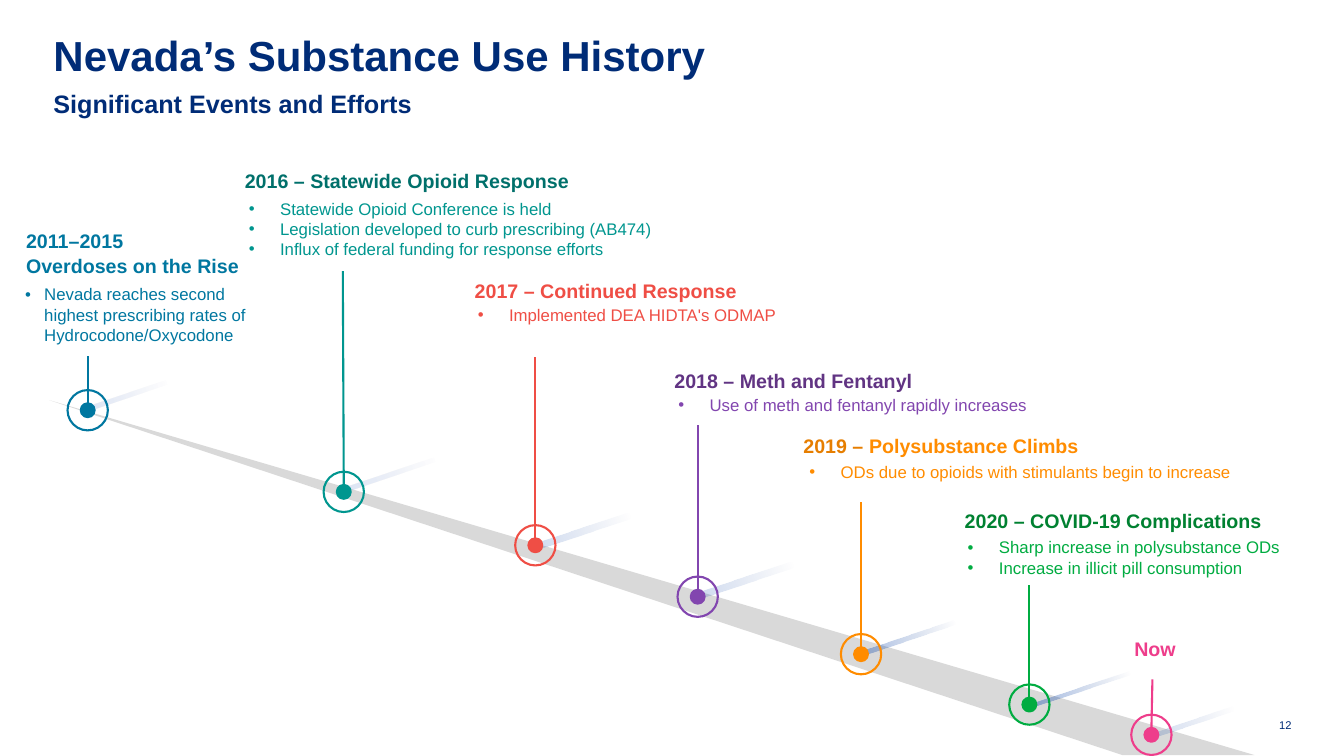
from collections import namedtuple

from lxml import etree
from pptx import Presentation
from pptx.dml.color import RGBColor
from pptx.enum import shapes, text
from pptx.oxml import ns
from pptx.util import Inches, Pt

NAVY = RGBColor(0x00, 0x2C, 0x77)
GREY = RGBColor(0xD9, 0xD9, 0xD9)
BEAM_START = RGBColor(0x00, 0x42, 0xB2)
BEAM_END = RGBColor(0x00, 0x33, 0x8B)
BLUE = RGBColor(0x00, 0x77, 0xA0)
TEAL = RGBColor(0x00, 0x96, 0x8F)
DARK_TEAL = RGBColor(0x00, 0x70, 0x6B)
RED = RGBColor(0xEF, 0x4E, 0x45)
PURPLE = RGBColor(0x82, 0x46, 0xAF)
DARK_PURPLE = RGBColor(0x61, 0x34, 0x83)
ORANGE = RGBColor(0xFF, 0x8C, 0x00)
DARK_ORANGE = RGBColor(0xE6, 0x7E, 0x00)
GREEN = RGBColor(0x00, 0xAC, 0x41)
DARK_GREEN = RGBColor(0x00, 0x81, 0x31)
PINK = RGBColor(0xEE, 0x3D, 0x8B)

SLIDE_W, SLIDE_H = 13.33, 7.5
RING, DOT = 0.4, 0.13
INSET = 0.1

# center: middle of the ring; stem: (bottom y, top x, top y)
# beam: left, top, width, height, opacity, end of fade (both in percent)
Marker = namedtuple("Marker", "color center stem beam")
MARKERS = [
    Marker(BLUE, (0.87, 4.07), (4.02, 0.87, 3.53), (0.84, 3.87, 1.02, 0.05, 14, 81)),
    Marker(TEAL, (3.41, 4.88), (4.89, 3.4, 2.69), (3.42, 4.66, 1.02, 0.05, 14, 89)),
    Marker(RED, (5.31, 5.41), (5.47, 5.31, 3.54), (5.27, 5.23, 1.02, 0.07, 20, 100)),
    Marker(PURPLE, (6.92, 5.92), (5.96, 6.92, 4.22), (6.88, 5.72, 1.02, 0.07, 20, 100)),
    Marker(ORANGE, (8.54, 6.49), (6.44, 8.54, 4.98), (8.48, 6.31, 1.02, 0.05, 37, 100)),
    Marker(GREEN, (10.21, 6.99), (6.96, 10.21, 5.8), (10.24, 6.81, 1, 0.04, 37, 100)),
    Marker(PINK, (11.42, 7.29), (7.24, 11.43, 6.74), (11.37, 7.14, 0.9, 0.05, 20, 100)),
]

# box: left, top, width; bullets_at: offset of the bullets from the box
Event = namedtuple("Event", "box heading bullets_at indent color bullets")
EVENTS = [
    Event((2.33, 1.62, 4.83), [[("2016 – Statewide Opioid Response", DARK_TEAL)]],
          (0.04, 0.3), 0.31, TEAL,
          ["Statewide Opioid Conference is held",
           "Legislation developed to curb prescribing (AB474)",
           "Influx of federal funding for response efforts"]),
    Event((0.16, 2.22, 2.69), [[("2011–2015", BLUE)], [("Overdoses on the Rise", BLUE)]],
          (-0.01, 0.55), 0.19, BLUE,
          ["Nevada reaches second highest prescribing rates of Hydrocodone/Oxycodone"]),
    Event((4.61, 2.71, 4.05), [[("2017 – Continued Response", RED)]],
          (0.03, 0.26), 0.31, RED, ["Implemented DEA HIDTA's ODMAP"]),
    Event((6.59, 3.61, 4.62), [[("2018 – Meth and Fentanyl", DARK_PURPLE)]],
          (0.04, 0.26), 0.31, PURPLE, ["Use of meth and fentanyl rapidly increases"]),
    Event((7.87, 4.25, 5.4), [[("2019 – ", DARK_ORANGE), ("Polysubstance Climbs", ORANGE)]],
          (0.06, 0.28), 0.31, ORANGE,
          ["ODs due to opioids with stimulants begin to increase"]),
    Event((9.47, 5, 3.8), [[("2020 – COVID-19 Complications", DARK_GREEN)]],
          (0.03, 0.28), 0.31, GREEN,
          ["Sharp increase in polysubstance ODs", "Increase in illicit pill consumption"]),
]


def add_run(p, words, size, color, bold=False):
    r = p.add_run()
    r.text = words
    r.font.name = "Arial"
    r.font.size = Pt(size)
    r.font.bold = bold
    r.font.color.rgb = color


def add_box(s, x, y, w, h, inset=0.0, anchor=text.MSO_ANCHOR.TOP):
    tf = s.shapes.add_textbox(Inches(x), Inches(y), Inches(w), Inches(h)).text_frame
    tf.word_wrap = True
    tf.vertical_anchor = anchor
    tf.margin_left = tf.margin_right = Inches(inset)
    tf.margin_top = tf.margin_bottom = Inches(inset / 2)
    return tf


def add_shape(s, kind, x, y, w, h):
    sp = s.shapes.add_shape(kind, Inches(x), Inches(y), Inches(w), Inches(h))
    sp.shadow.inherit = False
    return sp


def add_circle(s, center, size, color, width, filled):
    x, y = center
    sp = add_shape(s, shapes.MSO_SHAPE.OVAL, x - size / 2, y - size / 2, size, size)
    if filled:
        sp.fill.solid()
        sp.fill.fore_color.rgb = color
    else:
        sp.fill.background()
    sp.line.color.rgb = color
    sp.line.width = Pt(width)


def add_header(s, x, y, w):
    title = s.shapes.title
    title.left, title.top = Inches(x), Inches(y)
    title.width, title.height = Inches(w), Inches(0.54)
    tf = title.text_frame
    tf.margin_left = tf.margin_right = tf.margin_top = tf.margin_bottom = 0
    tf.vertical_anchor = text.MSO_ANCHOR.TOP
    p = tf.paragraphs[0]
    p.alignment = text.PP_ALIGN.LEFT
    p.line_spacing = 0.8
    add_run(p, "Nevada’s Substance Use History", 30, NAVY, True)
    tf = add_box(s, x, y + 0.49, w, 0.35)
    add_run(tf.paragraphs[0], "Significant Events and Efforts", 18, NAVY, True)


def add_road(s, x, y, w, h):
    road = s.shapes.build_freeform(Inches(x), Inches(y))
    road.add_line_segments([(Inches(x + w), Inches(y + h)),
                            (Inches(x + w - 1.31), Inches(y + h))], close=True)
    sp = road.convert_to_shape()
    sp.shadow.inherit = False
    sp.fill.solid()
    sp.fill.fore_color.rgb = GREY
    sp.line.fill.background()


def add_beam(s, x, y, w, h, opacity, fade_end):
    sp = add_shape(s, shapes.MSO_SHAPE.ROUNDED_RECTANGLE, x, y, w, h)
    sp.adjustments[0] = 0.5
    sp.rotation = 341.6
    sp.line.fill.background()
    sp.fill.gradient()
    sp.fill.gradient_angle = 0
    stops = zip(sp.fill.gradient_stops, (BEAM_START, BEAM_END), (0, fade_end))
    for stop, color, position in stops:
        stop.color.rgb = color
        stop.position = position / 100
    colors = sp._element.spPr.iter(ns.qn("a:srgbClr"))
    for color, percent in zip(list(colors), (opacity, 0)):
        etree.SubElement(color, ns.qn("a:alpha"), val=str(percent * 1000))


def add_marker(s, marker):
    add_beam(s, *marker.beam)
    add_circle(s, marker.center, RING, marker.color, 1.5, False)
    add_circle(s, marker.center, DOT, marker.color, 2, True)
    bottom, top_x, top = marker.stem
    stem = s.shapes.add_connector(shapes.MSO_CONNECTOR.STRAIGHT, Inches(marker.center[0]),
                                  Inches(bottom), Inches(top_x), Inches(top))
    stem.line.color.rgb = marker.color
    stem.line.width = Pt(1.5)
    etree.SubElement(stem._element.spPr, ns.qn("a:effectLst"))


def add_event(s, event):
    x, y, w = event.box
    # Heading lines
    for i, line in enumerate(event.heading):
        tf = add_box(s, x, y + i * 0.25, w, 0.34, INSET, text.MSO_ANCHOR.MIDDLE)
        for words, color in line:
            add_run(tf.paragraphs[0], words, 14, color, True)
    # Bullets
    dx, dy = event.bullets_at
    tf = add_box(s, x + dx, y + dy, w, 0.1 + 0.2 * len(event.bullets), INSET)
    for i, words in enumerate(event.bullets):
        p = tf.add_paragraph() if i else tf.paragraphs[0]
        pPr = p._p.get_or_add_pPr()
        pPr.set("marL", str(Inches(event.indent)))
        pPr.set("indent", str(-Inches(event.indent)))
        etree.SubElement(pPr, ns.qn("a:buFont"), typeface="Arial")
        etree.SubElement(pPr, ns.qn("a:buChar"), char="•")
        add_run(p, words, 12, event.color)


def main():
    prs = Presentation()
    prs.slide_width, prs.slide_height = Inches(SLIDE_W), Inches(SLIDE_H)
    s = prs.slides.add_slide(prs.slide_layouts[5])
    add_header(s, 0.53, 0.39, 12.27)
    # Timeline
    add_road(s, 0.49, 3.97, 11.95, 3.52)
    for marker in MARKERS:
        add_marker(s, marker)
    for event in EVENTS:
        add_event(s, event)
    tf = add_box(s, 11.25, 6.32, 1.88, 0.24)
    add_run(tf.paragraphs[0], "Now", 14, PINK, True)
    # Page number
    p = add_box(s, 12.5, 7.13, 0.31, 0.13).paragraphs[0]
    p.alignment = text.PP_ALIGN.RIGHT
    add_run(p, "12", 8, NAVY)
    prs.save("out.pptx")


if __name__ == "__main__":
    main()
